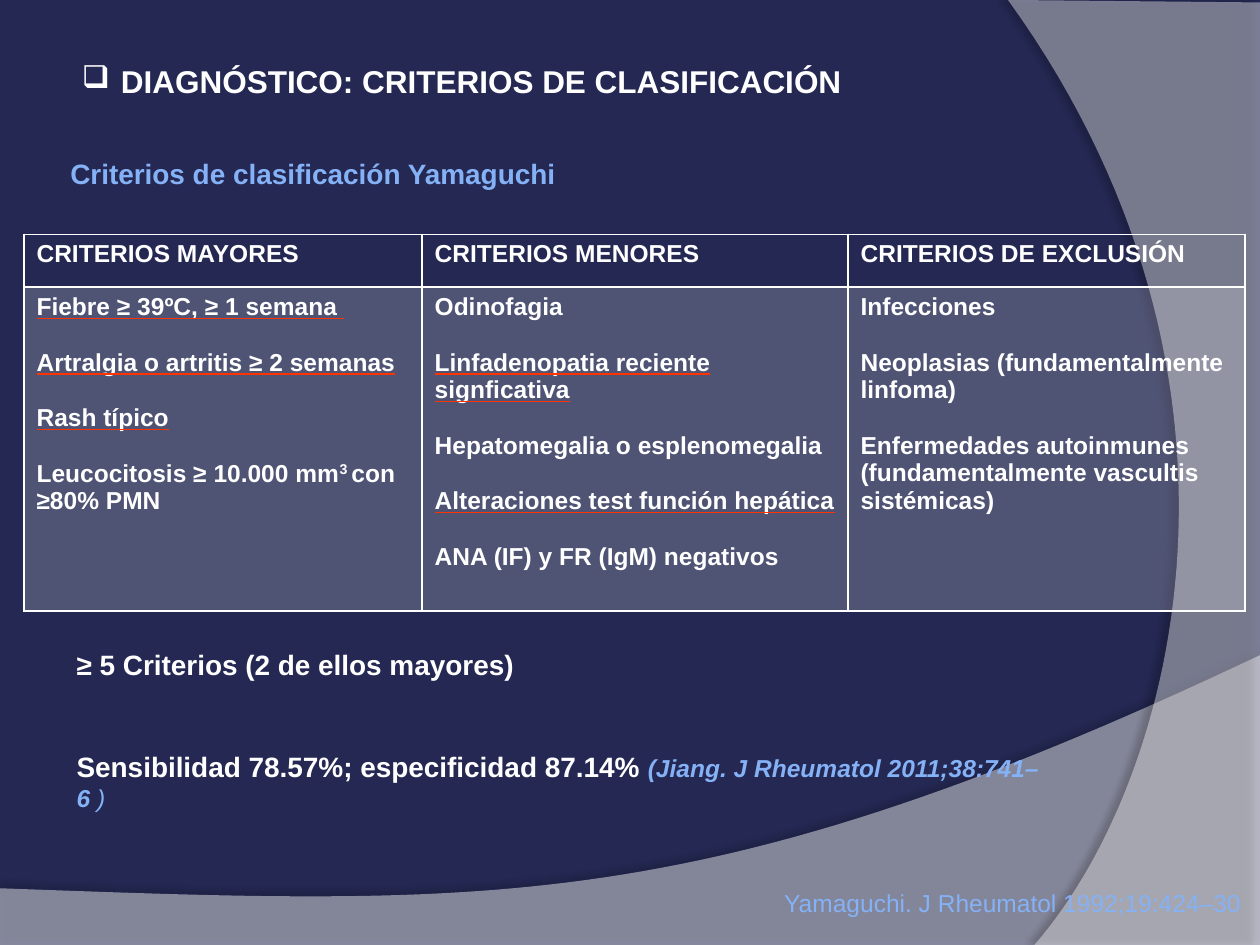
from lxml import etree
from pptx import Presentation
from pptx.dml.color import RGBColor
from pptx.enum.text import MSO_ANCHOR, MSO_AUTO_SIZE, PP_ALIGN
from pptx.oxml import parse_xml
from pptx.oxml.ns import nsdecls, qn
from pptx.util import Inches, Pt

NAVY = RGBColor(0x24, 0x28, 0x52)
WHITE = RGBColor(0xFF, 0xFF, 0xFF)
BLUE = RGBColor(0x85, 0xB2, 0xF6)
RED = RGBColor(0xFF, 0x33, 0x00)


def add_run(p, text, size, color=WHITE, bold=True, italic=False, underline=False):
    r = p.add_run()
    r.text = text
    r.font.name = "Arial"
    r.font.size = Pt(size)
    r.font.color.rgb = color
    r.font.bold = bold
    r.font.italic = italic
    if underline:
        r.font.underline = True
        fill = parse_xml(f'<a:uFill {nsdecls("a")}><a:solidFill><a:srgbClr val="{RED}"/>'
                         '</a:solidFill></a:uFill>')
        r.font._element.find(qn("a:latin")).addprevious(fill)
    return r


def set_white_fill(fill, alpha):
    fill.solid()
    fill.fore_color.rgb = WHITE
    color = fill._xPr.find(qn("a:solidFill"))[0]
    etree.SubElement(color, qn("a:alpha")).set("val", str(alpha * 1000))


prs = Presentation()
prs.slide_width, prs.slide_height = Inches(10), Inches(7.5)
s = prs.slides.add_slide(prs.slide_layouts[5])
s.background.fill.solid()
s.background.fill.fore_color.rgb = NAVY

# Background waves: straight corners, then a Bézier curve sampled into short segments
waves = [
    ([(0, 7.05), (0, 7.51), (10, 7.51)],
     [(10, 5.2), (5.59, 7.29), (3.91, 7.19), (0, 7.05)], 45, 35, 3.5, 270),
    ([(10, 0.02), (10, 7.5)],
     [(8.21, 7.5), (9.35, 6.19), (10.17, 3), (8, 0)], 40, 45, 4, 180),
]
STEPS = 60
for corners, curve, alpha, shade, dist, angle in waves:
    points = list(corners)
    for i in range(STEPS + 1):
        t = i / STEPS
        weights = ((1 - t) ** 3, 3 * t * (1 - t) ** 2, 3 * t ** 2 * (1 - t), t ** 3)
        points.append(tuple(sum(w * c[k] for w, c in zip(weights, curve)) for k in (0, 1)))
    points = [(Inches(x), Inches(y)) for x, y in points]
    fb = s.shapes.build_freeform(*points[0])
    fb.add_line_segments(points[1:], close=True)
    sp = fb.convert_to_shape()
    set_white_fill(sp.fill, alpha)
    sp.line.fill.background()
    sp._element.spPr.append(parse_xml(
        f'<a:effectLst {nsdecls("a")}><a:outerShdw blurRad="{Pt(4)}" dist="{Pt(dist)}" '
        f'dir="{angle * 60000}" rotWithShape="0"><a:srgbClr val="000000">'
        f'<a:alpha val="{shade * 1000}"/></a:srgbClr></a:outerShdw></a:effectLst>'))

# Title with a box bullet
title = s.shapes.title
title.left, title.top, title.width, title.height = (Inches(v) for v in (0.55, 0.44, 6.31, 0.4))
tf = title.text_frame
tf.word_wrap = False
tf.auto_size = MSO_AUTO_SIZE.NONE
tf.vertical_anchor = MSO_ANCHOR.TOP
p = tf.paragraphs[0]
p.alignment = PP_ALIGN.LEFT
add_run(p, "DIAGNÓSTICO: CRITERIOS DE CLASIFICACIÓN", 18)
pPr = p._p.get_or_add_pPr()
pPr.set("marL", str(Inches(0.31)))
pPr.set("indent", str(Inches(-0.31)))
pPr.append(parse_xml(f'<a:buClr {nsdecls("a")}><a:srgbClr val="{WHITE}"/></a:buClr>'))
pPr.append(parse_xml(f'<a:buChar {nsdecls("a")} char="❑"/>'))

# Criteria table: each entry is text, underlined, starts a new group
headers = ["CRITERIOS MAYORES", "CRITERIOS MENORES", "CRITERIOS DE EXCLUSIÓN"]
criteria = [
    [("Fiebre ≥ 39ºC, ≥ 1 semana ", True, False),
     ("Artralgia o artritis ≥ 2 semanas", True, True),
     ("Rash típico", True, True),
     ("Leucocitosis ≥ 10.000 mm", False, True)],
    [("Odinofagia", False, False),
     ("Linfadenopatia reciente signficativa", True, True),
     ("Hepatomegalia o esplenomegalia", False, True),
     ("Alteraciones test función hepática", True, True),
     ("ANA (IF) y FR (IgM) negativos", False, True)],
    [("Infecciones", False, False),
     ("Neoplasias (fundamentalmente linfoma)", False, True),
     ("Enfermedades autoinmunes", False, True),
     ("(fundamentalmente vascultis sistémicas)", False, False)],
]
table = s.shapes.add_table(2, 3, Inches(0.19), Inches(1.86), Inches(9.69), Inches(2.99)).table
table.first_row = table.horz_banding = False
for col, width in zip(table.columns, (3.16, 3.38, 3.15)):
    col.width = Inches(width)
for row, height in zip(table.rows, (0.42, 2.57)):
    row.height = Inches(height)

for c, (header, entries) in enumerate(zip(headers, criteria)):
    head, body = table.cell(0, c), table.cell(1, c)
    add_run(head.text_frame.paragraphs[0], header, 14)
    for i, (text, underline, new_group) in enumerate(entries):
        tf = body.text_frame
        p = tf.add_paragraph() if i else tf.paragraphs[0]
        p.space_before = Pt(16 if new_group else 0)
        add_run(p, text, 14, underline=underline)
    if c == 0:
        add_run(p, "3 ", 14).font._element.set("baseline", "30000")
        add_run(p, "con ≥80% PMN", 14)
    for cell in (head, body):
        tcPr = cell._tc.get_or_add_tcPr()
        for side in ("lnL", "lnR", "lnT", "lnB"):
            tcPr.append(parse_xml(
                f'<a:{side} {nsdecls("a")} w="{Pt(0.96)}"><a:solidFill>'
                f'<a:srgbClr val="{WHITE}"/></a:solidFill></a:{side}>'))
    head.fill.background()
    set_white_fill(body.fill, 20)

# Subtitle, diagnostic rule and source: box, wrap, alignment, paragraphs of runs
texts = [
    ((0.46, 1.19, 4.05, 0.36), False, PP_ALIGN.LEFT,
     [[("Criterios de clasificación Yamaguchi", 16, BLUE)]]),
    ((0.51, 5.09, 8.06, 1.16), False, PP_ALIGN.LEFT,
     [[("≥ 5 Criterios (2 de ellos mayores)", 16)],
      [("Sensibilidad 78.57%; especificidad 87.14% ", 16),
       ("(Jiang. J Rheumatol 2011;38:741–6 ", 14, BLUE, True, True),
       (")", 14, BLUE, False, True)]]),
    ((5.28, 7, 4.67, 0.33), True, PP_ALIGN.RIGHT,
     [[("Yamaguchi. J Rheumatol 1992;19:424–30", 14, BLUE, False)]]),
]
for box, wrap, align, paragraphs in texts:
    tf = s.shapes.add_textbox(*(Inches(v) for v in box)).text_frame
    tf.word_wrap = wrap
    for i, runs in enumerate(paragraphs):
        p = tf.add_paragraph() if i else tf.paragraphs[0]
        p.alignment = align
        p.space_before = Pt(39 if i else 0)
        for run in runs:
            add_run(p, *run)

prs.save("out.pptx")
